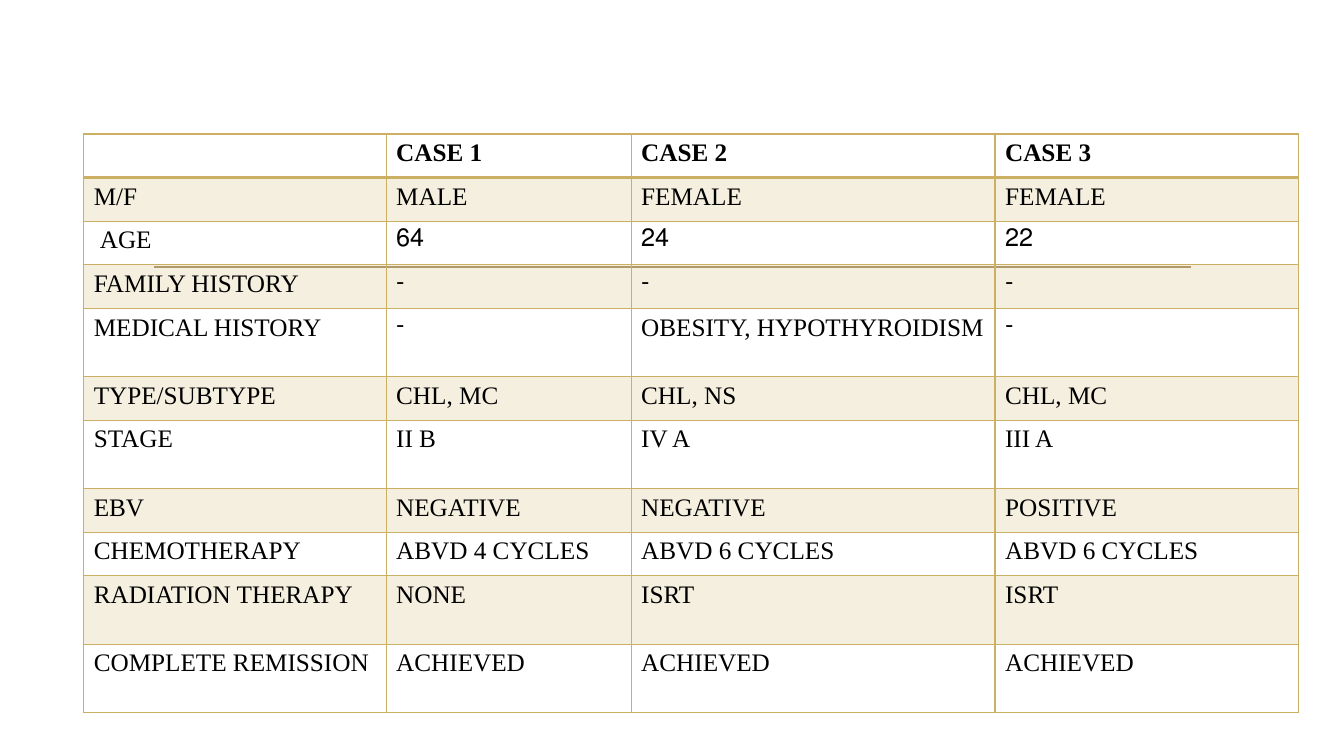
from lxml import etree
from pptx import Presentation
from pptx import util as u
from pptx.dml.color import RGBColor
from pptx.enum import shapes, text
from pptx.oxml import ns

FONT, BLACK, GOLD, TAN = "Times New Roman", "000000", "CBAF62", "AB946B"

CASES = [
    ("", "CASE 1", "CASE 2", "CASE 3"),
    ("M/F", "MALE", "FEMALE", "FEMALE"),
    ("AGE", "64", "24", "22"),
    ("FAMILY HISTORY", "-", "-", "-"),
    ("MEDICAL HISTORY", "-", "OBESITY, HYPOTHYROIDISM", "-"),
    ("TYPE/SUBTYPE", "CHL, MC", "CHL, NS", "CHL, MC"),
    ("STAGE", "II B", "IV A", "III A"),
    ("EBV", "NEGATIVE", "NEGATIVE", "POSITIVE"),
    ("CHEMOTHERAPY", "ABVD 4 CYCLES", "ABVD 6 CYCLES", "ABVD 6 CYCLES"),
    ("RADIATION THERAPY", "NONE", "ISRT", "ISRT"),
    ("COMPLETE REMISSION", "ACHIEVED", "ACHIEVED", "ACHIEVED"),
]
TALL = {"MEDICAL HISTORY", "STAGE", "RADIATION THERAPY", "COMPLETE REMISSION"}


def rgb(code):
    return RGBColor.from_string(code)


def sub(node, tag, **attrs):
    return etree.SubElement(node, ns.qn(tag), **attrs)


class Deck:
    """Lengths are percent of the slide's width (x) and height (y)."""

    def __init__(self):
        self.prs = Presentation()
        self.prs.slide_width = u.Inches(13.33)
        self.prs.slide_height = u.Inches(7.5)
        self.slide = self.prs.slides.add_slide(self.prs.slide_layouts[6])

    def x(self, share):
        return round(self.prs.slide_width * share / 100)

    def y(self, share):
        return round(self.prs.slide_height * share / 100)

    def rule(self, left, right, top, color, width):
        line = self.slide.shapes.add_connector(
            shapes.MSO_CONNECTOR.STRAIGHT,
            self.x(left), self.y(top), self.x(right), self.y(top))
        line.line.color.rgb = rgb(color)
        line.line.width = u.Pt(width)
        sub(line._element.spPr, "a:effectLst")

    def border(self, cell, side, width):
        props = cell._tc.get_or_add_tcPr()
        edge = sub(props, f"a:ln{side}", w=str(u.Pt(width)))
        sub(sub(edge, "a:solidFill"), "a:srgbClr", val=GOLD)

    def tint(self, cell, color, alpha):
        cell.fill.solid()
        cell.fill.fore_color.rgb = rgb(color)
        fill = cell._tc.tcPr.find(ns.qn("a:solidFill"))
        sub(fill[0], "a:alpha", val=str(alpha * 1000))

    def label(self, cell, words, bold):
        par = cell.text_frame.paragraphs[0]
        par.text = words
        par.alignment = text.PP_ALIGN.LEFT
        par._p.get_or_add_pPr().set("rtl", "1")
        for run in par.runs:
            run.font.name, run.font.size = FONT, u.Pt(18)
            run.font.bold, run.font.color.rgb = bold, rgb(BLACK)

    def table(self, left, top, cols, rows, data):
        table = self.slide.shapes.add_table(
            len(rows), len(cols), self.x(left), self.y(top),
            self.x(sum(cols)), self.y(sum(rows))).table
        table.first_row = table.horz_banding = False
        for col, share in zip(table.columns, cols):
            col.width = self.x(share)
        for i, (row, share) in enumerate(zip(table.rows, rows)):
            row.height = self.y(share)
            for cell, words in zip(row.cells, data[i]):
                self.label(cell, words, i == 0)
                # The header is set off by a heavier rule
                for side in "LRTB":
                    heavy = (i, side) in ((0, "B"), (1, "T"))
                    self.border(cell, side, 2 if heavy else 1)
                # Every second row is tinted
                if i % 2:
                    self.tint(cell, GOLD, 20)
                else:
                    cell.fill.background()
        return table


def main():
    deck = Deck()
    # Rule behind the table
    deck.rule(11.48, 88.6, 35.33, TAN, 1.25)
    # Comparison of the three cases
    rows = [9.03 if row[0] in TALL else 5.77 for row in CASES]
    table = deck.table(6.23, 17.73, [22.5, 18.23, 27.08, 22.58], rows, CASES)
    # The age label sits slightly further in
    table.cell(2, 0).margin_left = u.Inches(0.16)
    deck.prs.save("out.pptx")


if __name__ == "__main__":
    main()
